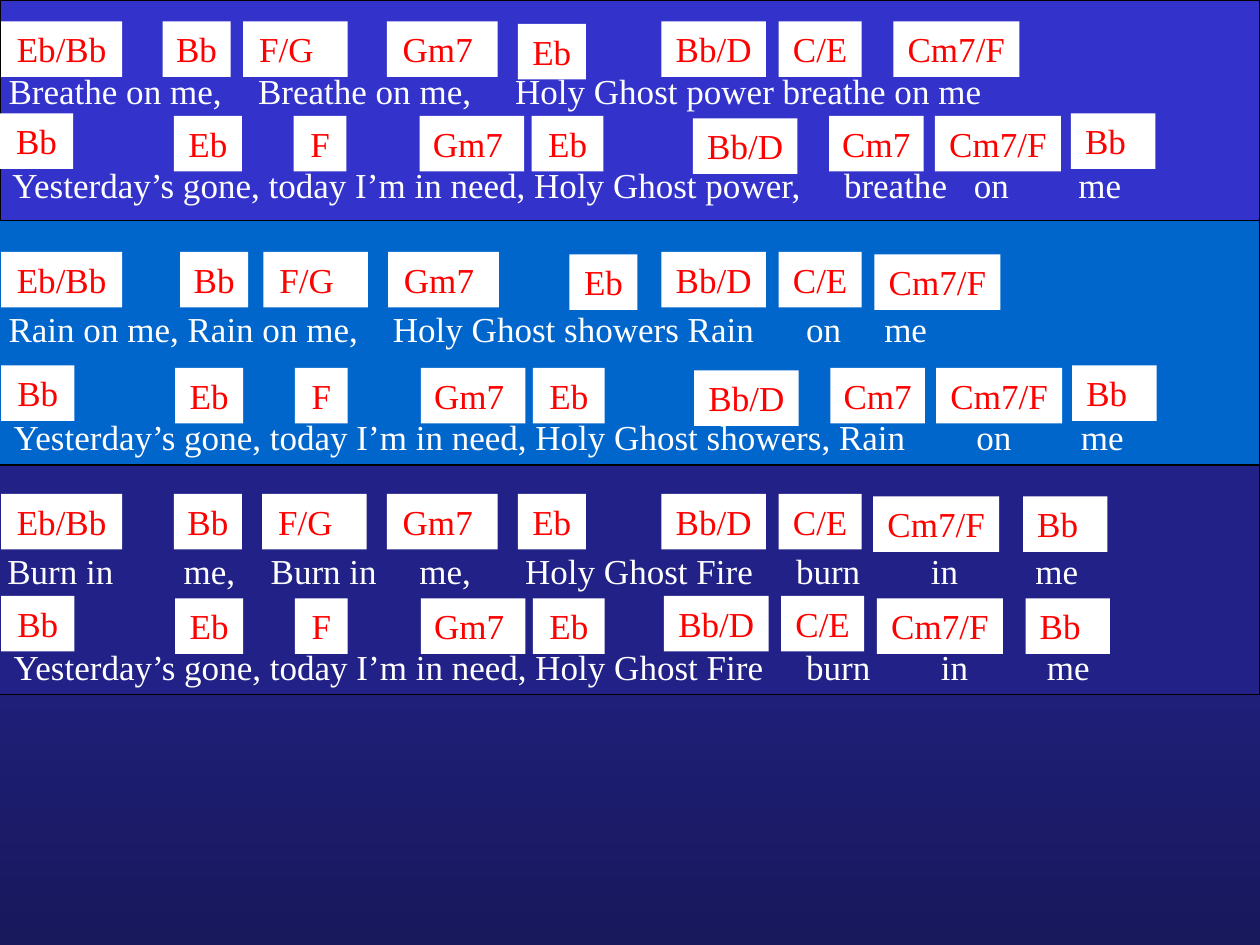
from dataclasses import dataclass

from pptx import Presentation
from pptx.dml.color import RGBColor
from pptx.enum import shapes, text
from pptx.oxml import ns
from pptx.util import Inches, Pt
from lxml import etree


@dataclass(frozen=True)
class Theme:
    font: str = "Times New Roman"
    size: int = 20
    lyric: str = "FFFFFF"
    chord: str = "FF0000"
    chord_box: str = "FFFFFF"
    border: str = "000000"
    back_top: str = "3333CC"
    back_bottom: str = "18185C"


THEME = Theme()
ROW_H = 0.44
INSET = 0.1

# kind: (width, extra right inset)
CHORDS = {
    "Eb/Bb": (0.96, 0), "Bb": (0.54, 0), "Bb start": (0.58, 0), "Bb end": (0.67, 0.12),
    "F": (0.42, 0), "F/G": (0.83, 0.14), "Gm7": (0.88, 0.07), "Gm7 mid": (0.83, 0.06),
    "Eb": (0.54, 0), "Eb mid": (0.57, 0), "Bb/D": (0.83, 0), "C/E": (0.66, 0),
    "Cm7": (0.75, 0), "Cm7/F": (1, 0),
}

GONE_START = [("Bb start", 0, 0), ("Eb", 1.38, 0.02), ("F", 2.33, 0.02),
              ("Gm7 mid", 3.33, 0.02), ("Eb mid", 4.22, 0.02)]
GONE_FULL = GONE_START + [("Bb/D", 5.5, 0.04), ("Cm7", 6.58, 0.02),
                          ("Cm7/F", 7.42, 0.02), ("Bb end", 8.5, 0)]
GONE_FIRE = GONE_START + [("Bb/D", 5.26, 0), ("C/E", 6.19, 0),
                          ("Cm7/F", 6.95, 0.02), ("Bb end", 8.13, 0.02)]

VERSES = [
    dict(box=(0, 0, 10, 1.75), fill="3333CC",
         lyrics=[(-0.03, 0.5, 10, [("Breathe on me,", 0), ("Breathe on me,", 2.05),
                                   ("Holy Ghost power breathe on me", 4.09)]),
                 (0, 1.25, 9.58, [("Yesterday’s gone, today I’m in need, Holy Ghost power,", 0),
                                  ("breathe", 6.7), ("on", 7.73), ("me", 8.56)])],
         chords=[(0.01, 0.17, [("Eb/Bb", 0, 0), ("Bb", 1.28, 0), ("F/G", 1.92, 0),
                               ("Gm7", 3.06, 0), ("Eb", 4.1, 0.02), ("Bb/D", 5.24, 0),
                               ("C/E", 6.17, 0), ("Cm7/F", 7.08, 0)]),
                 (0, 0.9, GONE_FULL)]),
    dict(box=(-0.03, 1.75, 10.03, 1.94), fill="0066CC",
         lyrics=[(-0.03, 0.64, 10, [("Rain on me, Rain on me,", 0),
                                    ("Holy Ghost showers Rain", 3.12),
                                    ("on", 6.4), ("me", 7.02)]),
                 (0.01, 1.5, 9.58,
                  [("Yesterday’s gone, today I’m in need, Holy Ghost showers, Rain", 0),
                   ("on", 7.75), ("me", 8.58)])],
         chords=[(0.01, 0.25, [("Eb/Bb", 0, 0), ("Bb", 1.42, 0), ("F/G", 2.08, 0),
                               ("Gm7", 3.07, 0), ("Eb", 4.51, 0.02), ("Bb/D", 5.24, 0),
                               ("C/E", 6.17, 0), ("Cm7/F", 6.93, 0.02)]),
                 (0.01, 1.15, GONE_FULL)]),
    dict(box=(-0.03, 3.69, 10.03, 1.82), fill="212187",
         lyrics=[(-0.04, 0.62, 10, [("Burn in", 0), ("me,", 1.46), ("Burn in", 2.15),
                                    ("me,", 3.33), ("Holy Ghost Fire", 4.17),
                                    ("burn", 6.32), ("in", 7.39), ("me", 8.22)]),
                 (0.01, 1.38, 9.58,
                  [("Yesterday’s gone, today I’m in need, Holy Ghost Fire", 0),
                   ("burn", 6.4), ("in", 7.47), ("me", 8.31)])],
         chords=[(0.01, 0.23, [("Eb/Bb", 0, 0), ("Bb", 1.37, 0), ("F/G", 2.07, 0),
                               ("Gm7", 3.06, 0), ("Eb", 4.1, 0), ("Bb/D", 5.24, 0),
                               ("C/E", 6.17, 0), ("Cm7/F", 6.92, 0.02),
                               ("Bb end", 8.11, 0.02)]),
                 (0.01, 1.04, GONE_FIRE)]),
]


def rgb(value):
    return RGBColor.from_string(value)


def set_text(sp, words, color, align, right=INSET):
    tf = sp.text_frame
    tf.word_wrap = True
    tf.vertical_anchor = text.MSO_ANCHOR.TOP
    tf.margin_left, tf.margin_right = Inches(INSET), Inches(right)
    tf.margin_top = tf.margin_bottom = Inches(0.05)
    p = tf.paragraphs[0]
    p.text = words
    p.alignment = align
    for r in p.runs:
        r.font.name = THEME.font
        r.font.size = Pt(THEME.size)
        r.font.color.rgb = rgb(color)
    return p


def add_rect(s, box, fill):
    sp = s.shapes.add_shape(shapes.MSO_SHAPE.RECTANGLE, *map(Inches, box))
    sp.shadow.inherit = False
    sp.fill.solid()
    sp.fill.fore_color.rgb = rgb(fill)
    return sp


def add_lyric(s, box, parts):
    sp = s.shapes.add_textbox(*map(Inches, box))
    words = "\t".join(part for part, _ in parts)
    p = set_text(sp, words, THEME.lyric, text.PP_ALIGN.LEFT)
    tabs = etree.SubElement(p._p.get_or_add_pPr(), ns.qn("a:tabLst"))
    for _, x in parts[1:]:
        pos = Inches(x - box[0] - INSET)
        etree.SubElement(tabs, ns.qn("a:tab"), pos=str(int(pos)), algn="l")


def add_chord_row(s, left, top, chords):
    for kind, x, drop in chords:
        width, extra = CHORDS[kind]
        sp = add_rect(s, (left + x, top + drop, width, ROW_H), THEME.chord_box)
        sp.line.fill.background()
        set_text(sp, kind.split()[0], THEME.chord, text.PP_ALIGN.CENTER, INSET + extra)


def add_verse(s, box, fill, lyrics, chords):
    band = add_rect(s, box, fill)
    band.line.color.rgb = rgb(THEME.border)
    band.line.width = Pt(0.75)
    top = box[1]
    for left, y, width, parts in lyrics:
        add_lyric(s, (left, top + y, width, ROW_H), parts)
    for left, y, row in chords:
        add_chord_row(s, left, top + y, row)


def set_background(s):
    fill = s.background.fill
    fill.gradient()
    fill.gradient_angle = 270
    for stop, color in zip(fill.gradient_stops, (THEME.back_top, THEME.back_bottom)):
        stop.color.rgb = rgb(color)


def main():
    prs = Presentation()
    prs.slide_width, prs.slide_height = Inches(10), Inches(7.5)
    s = prs.slides.add_slide(prs.slide_layouts[6])
    set_background(s)
    for verse in VERSES:
        add_verse(s, **verse)
    prs.save("out.pptx")


if __name__ == "__main__":
    main()
